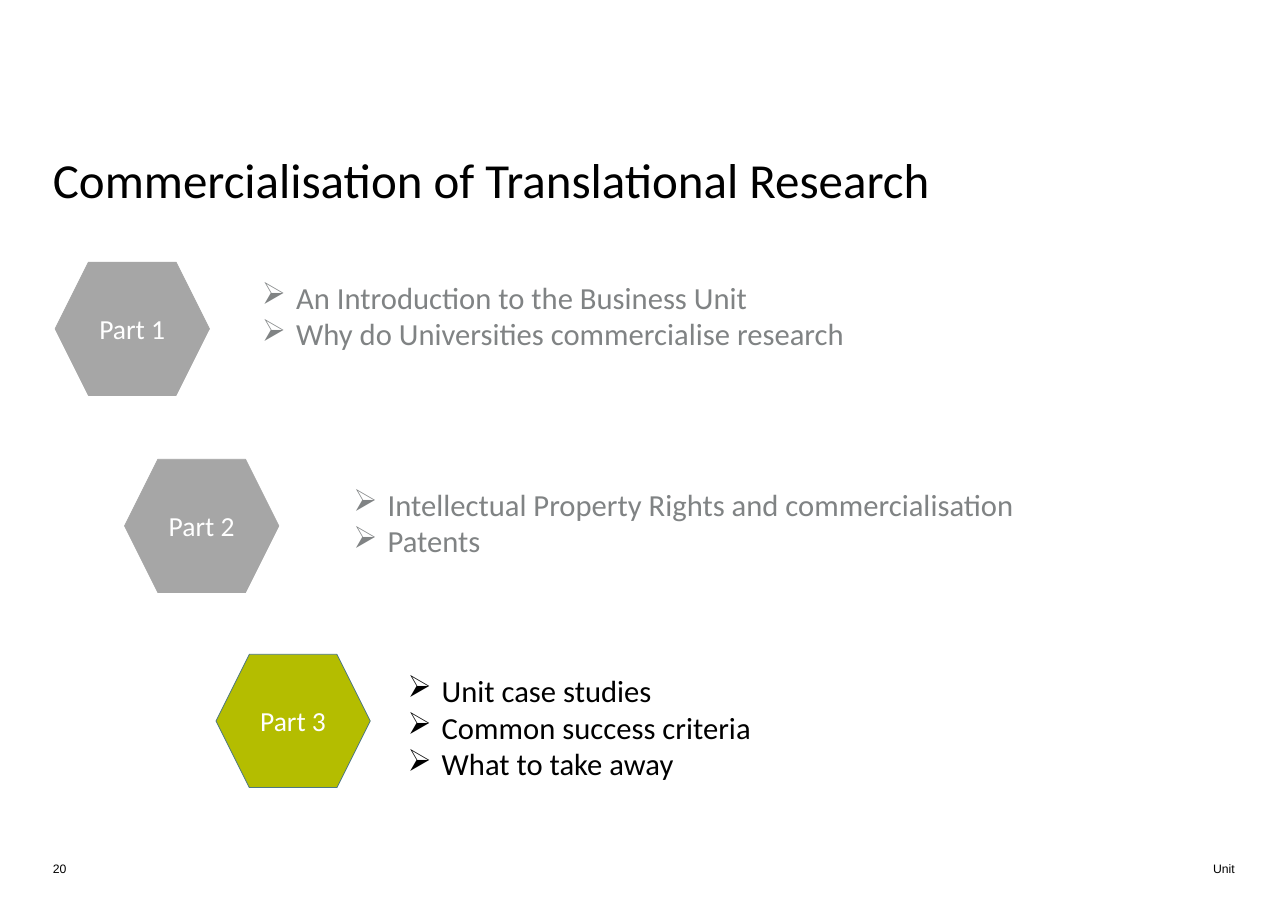
import pptx
import pptx.util
import pptx.dml.color
import pptx.enum.shapes
import pptx.enum.text
import lxml.etree

COLOURS = {"black": "000000", "white": "FFFFFF", "muted": "808384",
           "grey": "A6A6A6", "lime": "B4BD00", "teal": "4D7883"}
ANCHOR = pptx.enum.text.MSO_ANCHOR

deck = pptx.Presentation()
deck.slide_width = pptx.util.Inches(11.69)
deck.slide_height = pptx.util.Inches(8.27)
page = deck.slides.add_slide(deck.slide_layouts[6])


def area(left, top, width, height):
    across, down = deck.slide_width / 100, deck.slide_height / 100
    return [round(length) for length in
            (left * across, top * down, width * across, height * down)]


def write(box, text, size, colour, font="Calibri"):
    box.text_frame.text = text
    box.text_frame.word_wrap = True
    for para in box.text_frame.paragraphs:
        for span in para.runs:
            span.font.name = font
            span.font.size = pptx.util.Pt(size)
            span.font.color.rgb = pptx.dml.color.RGBColor.from_string(COLOURS[colour])


labels = [
    ("Commercialisation of Translational Research", (4.11, 17.17, 88.97, 11.49),
     32, "Calibri", ANCHOR.TOP),
    ("20", (4.11, 93.95, 11.55, 2.78), 8, "Arial", ANCHOR.MIDDLE),
    ("Unit", (94.18, 93.95, 4.36, 2.78), 8, "Arial", ANCHOR.MIDDLE),
]
for text, place, size, font, anchor in labels:
    box = page.shapes.add_textbox(*area(*place))
    write(box, text, size, "black", font)
    frame = box.text_frame
    frame.margin_left = frame.margin_top = frame.margin_right = frame.margin_bottom = 0
    frame.vertical_anchor = anchor
    if size == 32:
        frame.paragraphs[0].line_spacing = 0.9

parts = [
    ((4.28, 28.78), (19.5, 29.99), "grey", "grey", "muted",
     ["An Introduction to the Business Unit",
      "Why do Universities commercialise research"]),
    ((9.67, 50.42), (26.6, 52.72), "grey", "grey", "muted",
     ["Intellectual Property Rights and commercialisation", "Patents"]),
    ((16.77, 71.83), (30.8, 73.16), "lime", "teal", "black",
     ["Unit case studies", "Common success criteria", "What to take away"]),
]
for number, (corner, start, fill, line, ink, topics) in enumerate(parts, 1):
    hexagon = page.shapes.add_shape(
        pptx.enum.shapes.MSO_SHAPE.HEXAGON, *area(*corner, 11.98, 14.63))
    hexagon.shadow.inherit = False
    hexagon.fill.solid()
    hexagon.fill.fore_color.rgb = pptx.dml.color.RGBColor.from_string(COLOURS[fill])
    hexagon.line.color.rgb = pptx.dml.color.RGBColor.from_string(COLOURS[line])
    hexagon.line.width = pptx.util.Pt(0.5)
    write(hexagon, f"Part {number}", 18, "white")
    hexagon.text_frame.vertical_anchor = ANCHOR.MIDDLE
    hexagon.text_frame.paragraphs[0].alignment = pptx.enum.text.PP_ALIGN.CENTER

    box = page.shapes.add_textbox(*area(*start, 60.39, 1.2 + 4.06 * len(topics)))
    write(box, "\n".join(topics), 20, ink)
    box.text_frame.auto_size = pptx.enum.text.MSO_AUTO_SIZE.SHAPE_TO_FIT_TEXT
    for para in box.text_frame.paragraphs:
        settings = para._p.get_or_add_pPr()
        indent = pptx.util.Inches(0.31)
        settings.set("marL", str(indent))
        settings.set("indent", str(-indent))
        bullet = lxml.etree.SubElement(settings, pptx.oxml.ns.qn("a:buChar"))
        bullet.set("char", "➢")

deck.save("out.pptx")
